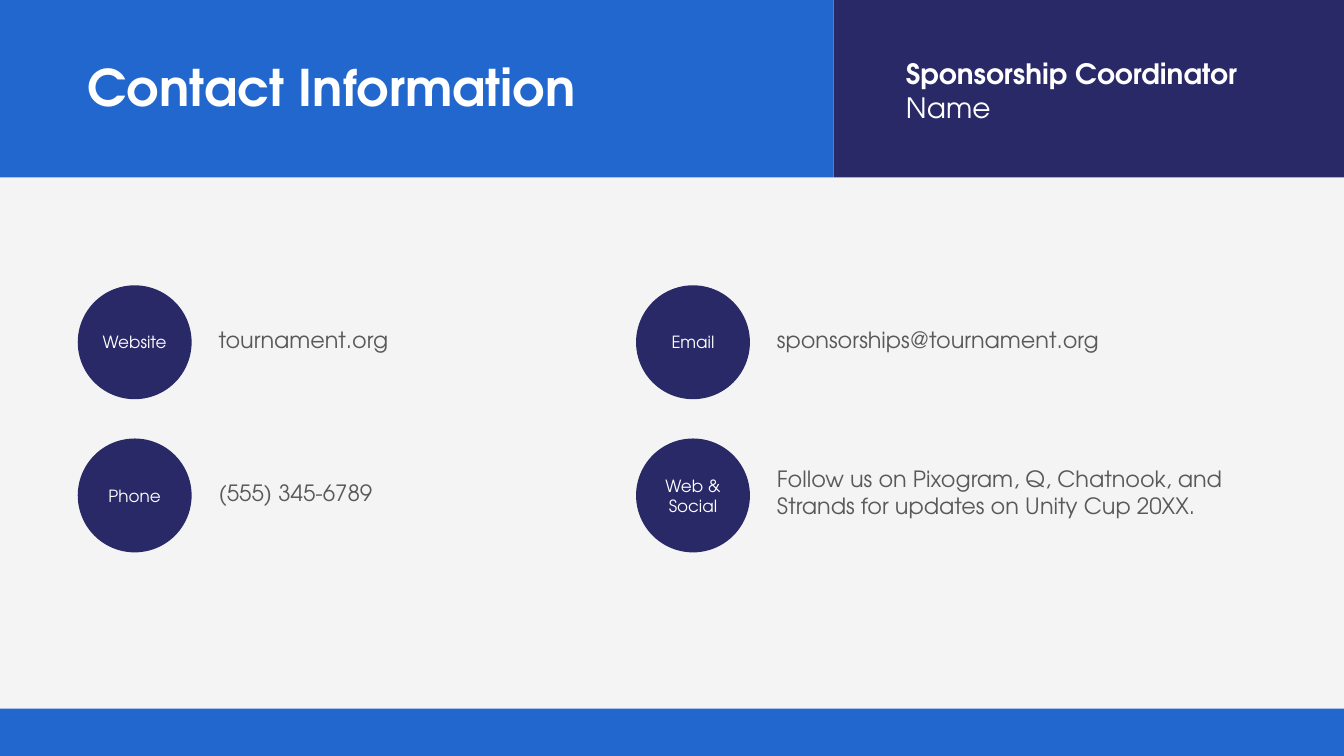
from pptx import Presentation
from pptx.dml.color import RGBColor
from pptx.enum import shapes, text
from pptx.util import Cm, Pt

NAVY = RGBColor(0x29, 0x29, 0x67)
BLUE = RGBColor(0x21, 0x67, 0xCE)
WHITE = RGBColor(0xFF, 0xFF, 0xFF)
GREY = RGBColor(0x59, 0x59, 0x59)
BACKGROUND = RGBColor(0xF4, 0xF4, 0xF4)
FONT = "TeX Gyre Adventor"

SLIDE_WIDTH, SLIDE_HEIGHT = 33.87, 19.05
HEADER_HEIGHT, TITLE_BAND_WIDTH = 4.47, 21.01
FOOTER_HEIGHT = 1.19
BADGE_SIZE = 2.87
COLUMNS = (1.96, 16.03)
ROWS = (7.19, 11.05)
DETAIL_OFFSET = 3.3
DETAIL_RAISE = 0.07

# column, row, badge label, detail, detail width, detail height
CONTACTS = [
    (0, 0, "Website", "tournament.org", 9.04, 0.94),
    (1, 0, "Email", "sponsorships@tournament.org", 13.11, 0.94),
    (0, 1, "Phone", "(555) 345-6789", 6.88, 0.94),
    (1, 1, "Web & Social",
     "Follow us on Pixogram, Q, Chatnook, and Strands for updates on Unity Cup 20XX.",
     12.19, 1.63),
]


def add_run(paragraph, wording, size, color, bold=False):
    run = paragraph.add_run()
    run.text = wording
    run.font.name = FONT
    run.font.size = Pt(size)
    run.font.bold = bold
    run.font.color.rgb = color


def add_filled(slide, kind, left, top, width, height, color):
    filled = slide.shapes.add_shape(kind, Cm(left), Cm(top), Cm(width), Cm(height))
    filled.shadow.inherit = False
    filled.fill.solid()
    filled.fill.fore_color.rgb = color
    filled.line.fill.background()
    return filled


def add_band(slide, left, top, width, height, color):
    add_filled(slide, shapes.MSO_SHAPE.RECTANGLE, left, top, width, height, color)


def add_badge(slide, left, top, label):
    badge = add_filled(slide, shapes.MSO_SHAPE.OVAL, left, top,
                       BADGE_SIZE, BADGE_SIZE, NAVY)
    frame = badge.text_frame
    frame.word_wrap = True
    frame.margin_left = frame.margin_right = 0
    frame.vertical_anchor = text.MSO_ANCHOR.MIDDLE
    paragraph = frame.paragraphs[0]
    paragraph.alignment = text.PP_ALIGN.CENTER
    add_run(paragraph, label, 12, WHITE)


def add_text(slide, left, top, width, height, lines, size, color):
    """Add a text box with one paragraph per (wording, bold) pair."""
    box = slide.shapes.add_textbox(Cm(left), Cm(top), Cm(width), Cm(height))
    frame = box.text_frame
    frame.word_wrap = True
    frame.auto_size = text.MSO_AUTO_SIZE.SHAPE_TO_FIT_TEXT
    for index, (wording, bold) in enumerate(lines):
        paragraph = frame.add_paragraph() if index else frame.paragraphs[0]
        add_run(paragraph, wording, size, color, bold)


def add_contact(slide, column, row, label, detail, width, height):
    left, top = COLUMNS[column], ROWS[row]
    add_badge(slide, left, top, label)
    detail_top = top + (BADGE_SIZE - height) / 2 - DETAIL_RAISE
    add_text(slide, left + DETAIL_OFFSET, detail_top, width, height,
             [(detail, False)], 16, GREY)


def main():
    deck = Presentation()
    deck.slide_width, deck.slide_height = Cm(SLIDE_WIDTH), Cm(SLIDE_HEIGHT)
    slide = deck.slides.add_slide(deck.slide_layouts[6])
    slide.background.fill.solid()
    slide.background.fill.fore_color.rgb = BACKGROUND

    add_band(slide, TITLE_BAND_WIDTH, 0, SLIDE_WIDTH - TITLE_BAND_WIDTH,
             HEADER_HEIGHT, NAVY)
    add_band(slide, 0, 0, TITLE_BAND_WIDTH, HEADER_HEIGHT, BLUE)
    add_band(slide, 0, SLIDE_HEIGHT - FOOTER_HEIGHT, SLIDE_WIDTH, FOOTER_HEIGHT, BLUE)

    add_text(slide, COLUMNS[0], 1.3, 14.38, 1.8,
             [("Contact Information", True)], 36, WHITE)
    add_text(slide, 22.58, 1.3, 10.01, 1.96,
             [("Sponsorship Coordinator", True), ("Name", False)], 20, WHITE)

    for contact in CONTACTS:
        add_contact(slide, *contact)

    deck.save("out.pptx")


if __name__ == "__main__":
    main()
